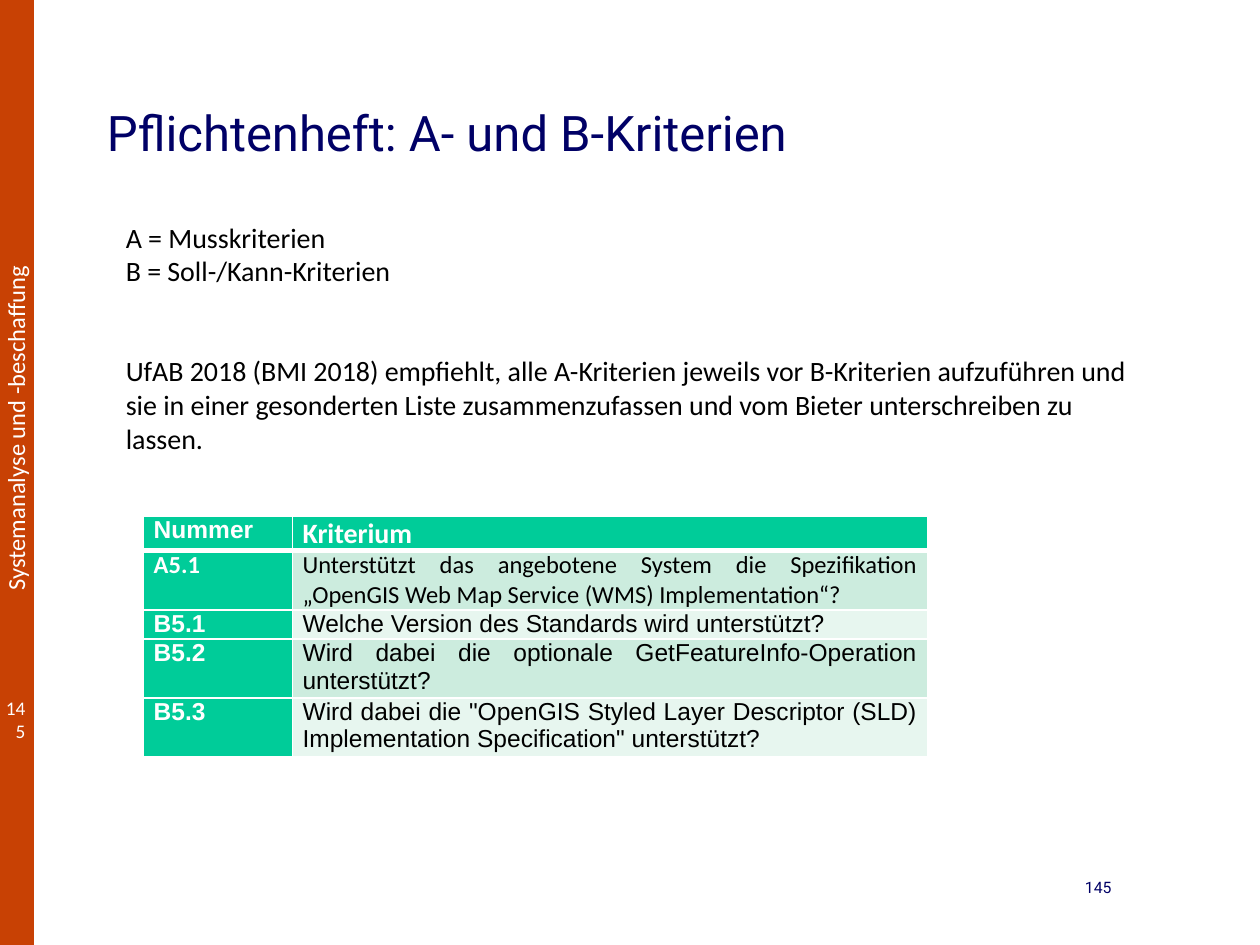
from dataclasses import dataclass

from lxml import etree
from pptx import Presentation
from pptx import util as u
from pptx.dml.color import RGBColor
from pptx.enum import shapes, text
from pptx.oxml.ns import qn


@dataclass(frozen=True)
class Theme:
    bar: str = "C84104"
    navy: str = "000066"
    green: str = "00CC99"
    bands: tuple = ("CCECDE", "E7F6EF")
    white: str = "FFFFFF"
    black: str = "000000"
    heading: str = "Roboto"
    body: str = "Calibri"
    plain: str = "Arial"
    title_size: int = 28
    body_size: int = 16
    cell_size: int = 14
    side_number_size: int = 11
    number_size: int = 9


THEME = Theme()
GRID = u.Inches(0.1)  # the slide is 100 columns by 75 rows
COLUMNS, ROWS = 100, 75
PAGE = "145"
LEFT, RIGHT, JUSTIFY = (text.PP_ALIGN.LEFT, text.PP_ALIGN.RIGHT,
                        text.PP_ALIGN.JUSTIFY)

CRITERIA = [
    ("A5.1", "Unterstützt das angebotene System die Spezifikation "
             "„OpenGIS Web Map Service (WMS) Implementation“?", THEME.body),
    ("B5.1", "Welche Version des Standards wird unterstützt?", THEME.plain),
    ("B5.2", "Wird dabei die optionale GetFeatureInfo-Operation unterstützt?",
     THEME.plain),
    ("B5.3", 'Wird dabei die "OpenGIS Styled Layer Descriptor (SLD) '
             'Implementation Specification" unterstützt?', THEME.plain),
]


def on_grid(*cells):
    return [u.Emu(round(cell * GRID)) for cell in cells]


def add_run(paragraph, words, font, size, color, bold=False):
    run = paragraph.add_run()
    run.text = words
    run.font.name = font
    run.font.size = u.Pt(size)
    run.font.bold = bold
    run.font.color.rgb = RGBColor.from_string(color)


def add_text(slide, box, lines, font, size, color, align=LEFT, wrap=True):
    shape = slide.shapes.add_textbox(*on_grid(*box))
    frame = shape.text_frame
    frame.word_wrap = wrap
    for index, line in enumerate(lines):
        paragraph = frame.add_paragraph() if index else frame.paragraphs[0]
        paragraph.alignment = align
        add_run(paragraph, line, font, size, color)
    return shape


def add_side_bar(slide, box):
    """Coloured strip with the course name reading upwards and the page number."""
    left, top, width, height = box
    bar = slide.shapes.add_shape(shapes.MSO_SHAPE.RECTANGLE, *on_grid(*box))
    bar.shadow.inherit = False
    bar.fill.solid()
    bar.fill.fore_color.rgb = RGBColor.from_string(THEME.bar)
    bar.line.fill.background()

    course = add_text(slide, (left - 12.8, top + 32.1, 28.1, 3.4),
                      ["Systemanalyse und -beschaffung"],
                      THEME.body, THEME.cell_size, THEME.white, wrap=False)
    course.rotation = 270
    add_text(slide, (left - 1.2, top + 54.8, width + 1.5, 3.3), [PAGE],
             THEME.body, THEME.side_number_size, THEME.white, RIGHT)


def add_title(slide, box):
    title = add_text(slide, box, ["Pflichtenheft: A- und B-Kriterien"],
                     THEME.heading, THEME.title_size, THEME.navy)
    title.text_frame.vertical_anchor = text.MSO_ANCHOR.MIDDLE


def add_explanation(slide, box):
    left, top, width, height = box
    style = (THEME.body, THEME.body_size, THEME.black)
    add_text(slide, (left, top, width, 6.4),
             ["A = Musskriterien", "B = Soll-/Kann-Kriterien"], *style)
    add_text(slide, (left, top + height - 9.1, width, 9.1),
             ["UfAB 2018 (BMI 2018) empfiehlt, alle A-Kriterien jeweils vor "
              "B-Kriterien aufzuführen und sie in einer gesonderten Liste "
              "zusammenzufassen und vom Bieter unterschreiben zu lassen."],
             *style)


def set_borders(cell, top, bottom):
    """White lines on all sides; the top and bottom widths are in points."""
    properties = cell._tc.get_or_add_tcPr()
    widths = {"a:lnL": 1, "a:lnR": 1, "a:lnT": top, "a:lnB": bottom}
    for index, (tag, width) in enumerate(widths.items()):
        line = etree.Element(qn(tag), w=str(u.Pt(width)))
        fill = etree.SubElement(line, qn("a:solidFill"))
        etree.SubElement(fill, qn("a:srgbClr"), val=THEME.white)
        properties.insert(index, line)


def fill_cell(cell, words, font, size, color, fill, bold):
    cell.margin_left = cell.margin_right = u.Inches(0.08)
    cell.margin_top = cell.margin_bottom = 0
    cell.fill.solid()
    cell.fill.fore_color.rgb = RGBColor.from_string(fill)
    paragraph = cell.text_frame.paragraphs[0]
    paragraph.alignment = JUSTIFY
    add_run(paragraph, words, font, size, color, bold)


def add_criteria_table(slide, box):
    row_heights = on_grid(2.7, 4.7, 2.2, 4.4, 4.4)
    number_share = 0.19
    table = slide.shapes.add_table(len(CRITERIA) + 1, 2, *on_grid(*box)).table
    number_width, = on_grid(box[2] * number_share)
    table.columns[0].width = number_width
    table.columns[1].width = on_grid(box[2])[0] - number_width
    for row, height in zip(table.rows, row_heights):
        row.height = height

    fill_cell(table.cell(0, 0), "Nummer", THEME.plain, THEME.cell_size,
              THEME.white, THEME.green, True)
    fill_cell(table.cell(0, 1), "Kriterium", THEME.body, THEME.body_size,
              THEME.white, THEME.green, True)
    for row, (number, criterion, font) in enumerate(CRITERIA, start=1):
        fill_cell(table.cell(row, 0), number, font, THEME.cell_size,
                  THEME.white, THEME.green, True)
        fill_cell(table.cell(row, 1), criterion, font, THEME.cell_size,
                  THEME.black, THEME.bands[(row - 1) % 2], False)
    for row in range(len(CRITERIA) + 1):
        for column in range(2):
            set_borders(table.cell(row, column), top=3 if row == 1 else 1,
                        bottom=3 if row == 0 else 1)


def add_page_number(slide, box):
    add_text(slide, box, [PAGE], THEME.heading, THEME.number_size,
             THEME.navy, RIGHT)


def main():
    presentation = Presentation()
    presentation.slide_width, presentation.slide_height = on_grid(COLUMNS, ROWS)
    slide = presentation.slides.add_slide(presentation.slide_layouts[6])
    add_side_bar(slide, (0, 0, 2.7, ROWS))
    add_title(slide, (7.5, 6.7, 81.8, 7.5))
    add_criteria_table(slide, (11.4, 41, 62.2, 18.4))
    add_page_number(slide, (69.2, 69.2, 20, 4.2))
    add_explanation(slide, (9, 17, 81.9, 19.7))
    presentation.save("out.pptx")


if __name__ == "__main__":
    main()
